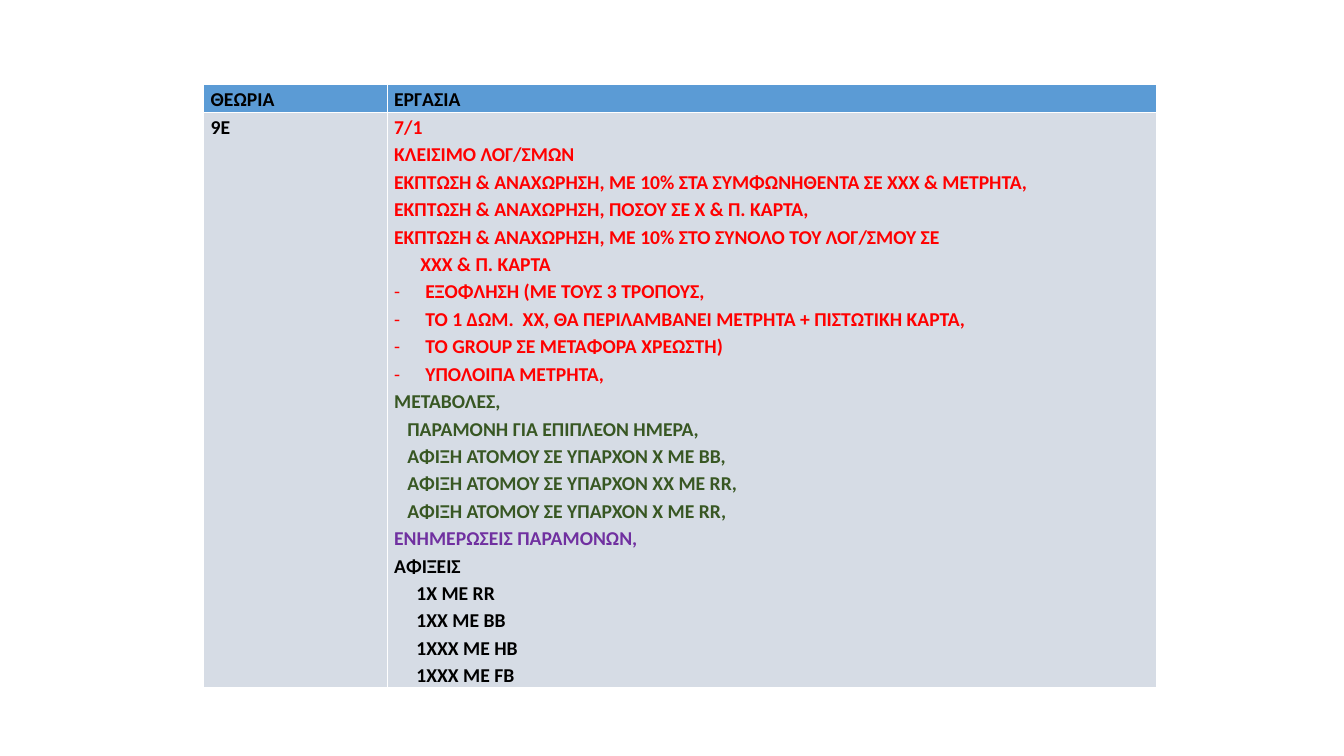
from dataclasses import dataclass

from lxml.etree import SubElement
from pptx import Presentation
from pptx.dml.color import RGBColor
from pptx.enum.text import PP_ALIGN
from pptx.oxml.ns import qn
from pptx.util import Inches, Pt


@dataclass(frozen=True)
class Theme:
    font: str = "Calibri"
    size: int = 14
    spacing: float = 1.15
    black: str = "000000"
    red: str = "FF0000"
    green: str = "385723"
    purple: str = "7030A0"
    header: str = "5B9BD5"
    body: str = "D6DCE5"
    border: str = "FFFFFF"


theme = Theme()
LEFT, JUSTIFY = PP_ALIGN.LEFT, PP_ALIGN.JUSTIFY

# Groups of lines: colour, alignment, indent in inches, dash, lines
tasks = [
    (theme.red, LEFT, 0, False, [
        "7/1",
        "ΚΛΕΙΣΙΜΟ ΛΟΓ/ΣΜΩΝ",
        "ΕΚΠΤΩΣΗ & ΑΝΑΧΩΡΗΣΗ, ΜΕ 10% ΣΤΑ ΣΥΜΦΩΝΗΘΕΝΤΑ ΣΕ ΧΧΧ & ΜΕΤΡΗΤΑ,",
        "ΕΚΠΤΩΣΗ & ΑΝΑΧΩΡΗΣΗ, ΠΟΣΟΥ ΣΕ Χ & Π. ΚΑΡΤΑ,",
        "ΕΚΠΤΩΣΗ & ΑΝΑΧΩΡΗΣΗ, ΜΕ 10% ΣΤΟ ΣΥΝΟΛΟ ΤΟΥ ΛΟΓ/ΣΜΟΥ ΣΕ",
    ]),
    (theme.red, LEFT, 0.26, False, ["ΧΧΧ & Π. ΚΑΡΤΑ"]),
    (theme.red, LEFT, 0.31, True, [
        "ΕΞΟΦΛΗΣΗ (ΜΕ ΤΟΥΣ 3 ΤΡΟΠΟΥΣ,",
        "ΤΟ 1 ΔΩΜ.  ΧΧ, ΘΑ ΠΕΡΙΛΑΜΒΑΝΕΙ ΜΕΤΡΗΤΑ + ΠΙΣΤΩΤΙΚΗ ΚΑΡΤΑ,",
        "ΤΟ GROUP ΣΕ ΜΕΤΑΦΟΡΑ ΧΡΕΩΣΤΗ)",
        "ΥΠΟΛΟΙΠΑ ΜΕΤΡΗΤΑ,",
    ]),
    (theme.green, JUSTIFY, 0, False, ["ΜΕΤΑΒΟΛΕΣ,"]),
    (theme.green, JUSTIFY, 0.13, False, [
        "ΠΑΡΑΜΟΝΗ ΓΙΑ ΕΠΙΠΛΕΟΝ ΗΜΕΡΑ,",
        "ΑΦΙΞΗ ΑΤΟΜΟΥ ΣΕ ΥΠΑΡΧΟΝ Χ ΜΕ ΒΒ,",
        "ΑΦΙΞΗ ΑΤΟΜΟΥ ΣΕ ΥΠΑΡΧΟΝ ΧΧ ΜΕ RR,",
        "ΑΦΙΞΗ ΑΤΟΜΟΥ ΣΕ ΥΠΑΡΧΟΝ Χ ΜΕ RR,",
    ]),
    (theme.purple, JUSTIFY, 0, False, ["ΕΝΗΜΕΡΩΣΕΙΣ ΠΑΡΑΜΟΝΩΝ,"]),
    (theme.black, JUSTIFY, 0, False, ["ΑΦΙΞΕΙΣ"]),
    (theme.black, JUSTIFY, 0.22, False, [
        "1Χ ΜΕ RR",
        "1ΧΧ ΜΕ ΒΒ",
        "1ΧΧΧ ΜΕ ΗΒ",
        "1ΧΧΧ ΜΕ FB",
    ]),
]


def plain(text):
    return [(theme.black, JUSTIFY, 0, False, [text])]


def write_line(para, text, color, align, indent, dash):
    para.alignment = align
    para.line_spacing = theme.spacing
    properties = para._p.get_or_add_pPr()
    properties.set("marL", str(Inches(indent)))
    if dash:
        properties.set("indent", str(-Inches(indent)))
        SubElement(properties, qn("a:buFont"), typeface=theme.font)
        SubElement(properties, qn("a:buChar"), char="-")
    span = para.add_run()
    span.text = text
    font_format = {"name": theme.font, "size": Pt(theme.size), "bold": True}
    for name, value in font_format.items():
        setattr(span.font, name, value)
    span.font.color.rgb = RGBColor.from_string(color)


# Slide
deck = Presentation()
deck.slide_width, deck.slide_height = Inches(13.33), Inches(7.5)
page = deck.slides.add_slide(deck.slide_layouts[6])

# Table grid
column_widths = [1.82, 7.63]
row_heights = [0.27, 5.71]
table = page.shapes.add_table(
    2, 2, Inches(2.02), Inches(0.84),
    Inches(sum(column_widths)), Inches(sum(row_heights)),
).table
for column, width in zip(table.columns, column_widths):
    column.width = Inches(width)
for row, height in zip(table.rows, row_heights):
    row.height = Inches(height)

# Cells: borders, fill and text
cell_format = {
    "margin_left": Inches(0.07), "margin_right": Inches(0.07),
    "margin_top": 0, "margin_bottom": 0,
}
rows = [
    (theme.header, [plain("ΘΕΩΡΙΑ"), plain("ΕΡΓΑΣΙΑ")]),
    (theme.body, [plain("9Ε"), tasks]),
]
for row, (fill_color, contents) in zip(table.rows, rows):
    for cell, groups in zip(row.cells, contents):
        for name, value in cell_format.items():
            setattr(cell, name, value)
        cell_properties = cell._tc.get_or_add_tcPr()
        for side in ("lnL", "lnR", "lnT", "lnB"):
            line = SubElement(cell_properties, qn(f"a:{side}"), w=str(Pt(1)))
            line_fill = SubElement(line, qn("a:solidFill"))
            SubElement(line_fill, qn("a:srgbClr"), val=theme.border)
        cell.fill.solid()
        cell.fill.fore_color.rgb = RGBColor.from_string(fill_color)

        box = cell.text_frame
        lines = [(text, *style) for *style, texts in groups for text in texts]
        for number, line in enumerate(lines):
            para = box.add_paragraph() if number else box.paragraphs[0]
            write_line(para, *line)

deck.save("out.pptx")
